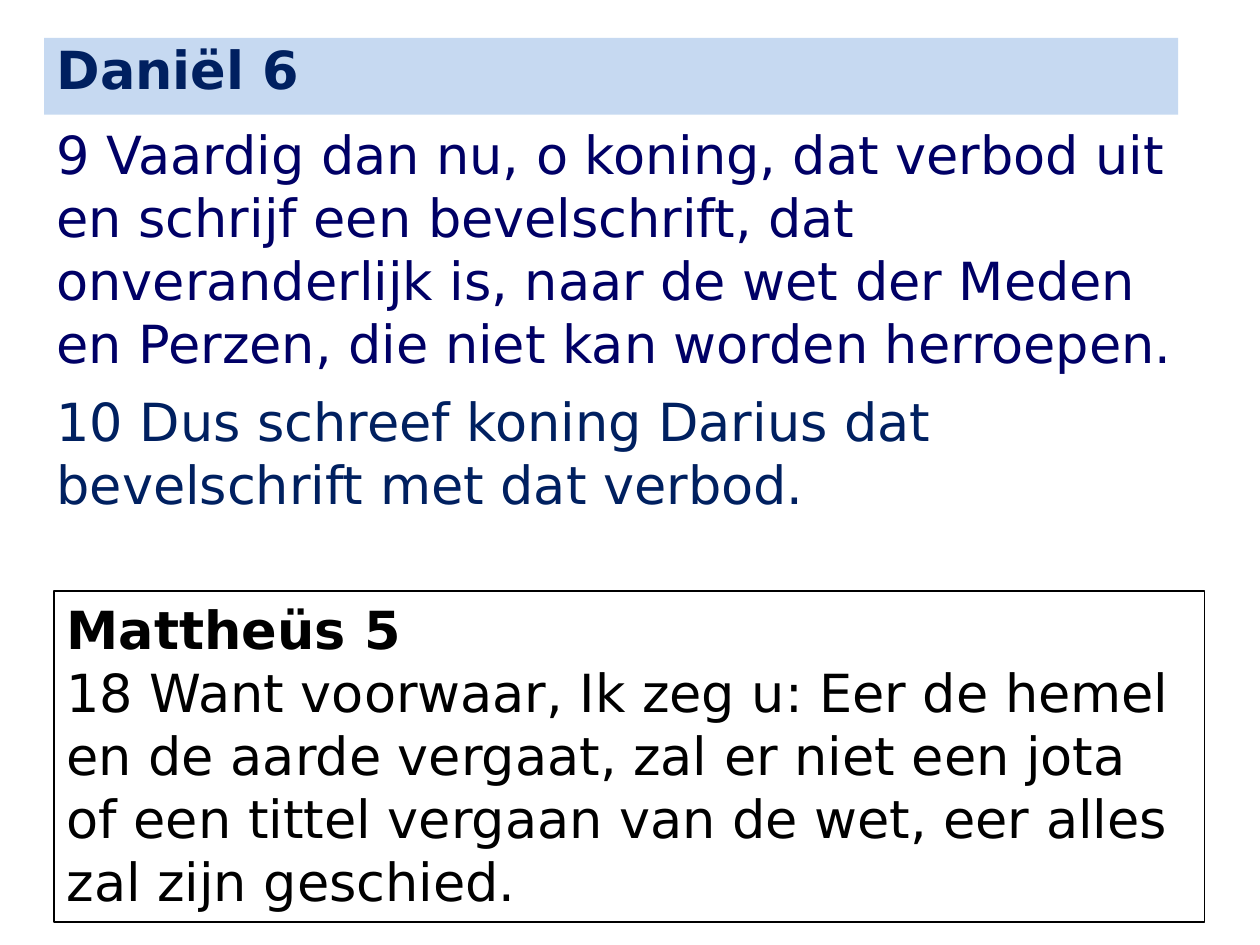
from pptx import Presentation
from pptx.dml.color import RGBColor
from pptx.enum.shapes import MSO_SHAPE
from pptx.enum.text import MSO_ANCHOR, PP_ALIGN
from pptx.util import Inches, Pt

RECTANGLE = MSO_SHAPE.RECTANGLE
TOP = MSO_ANCHOR.TOP
LEFT = PP_ALIGN.LEFT
FONT = "DejaVu Sans"
COLOURS = {
    "band": "C6D9F1",
    "heading": "002060",
    "verse": "000066",
    "black": "000000",
}


def colour(name):
    """Return the named colour."""
    return RGBColor.from_string(COLOURS[name])


def write_text(shape, paragraphs, colour_name, line_spacing=None):
    """Write (text, bold) paragraphs into a shape."""
    frame = shape.text_frame
    frame.word_wrap = True
    frame.vertical_anchor = TOP
    frame.text = "\n".join(text for text, bold in paragraphs)
    for paragraph, (text, bold) in zip(frame.paragraphs, paragraphs):
        paragraph.alignment = LEFT
        if line_spacing:
            paragraph.line_spacing = line_spacing
        font = paragraph.runs[0].font
        font.name = FONT
        font.size = Pt(30)
        font.bold = bold
        font.color.rgb = colour(colour_name)


def add_heading(slide, box, text):
    """Place the chapter name on a filled band."""
    band = slide.shapes.add_shape(RECTANGLE, *box)
    band.shadow.inherit = False
    band.fill.solid()
    band.fill.fore_color.rgb = colour("band")
    band.line.fill.background()
    write_text(band, [(text, True)], "heading", 0.9)


def add_verse(slide, box, text, colour_name):
    """Place one verse in a text box."""
    verse = slide.shapes.add_textbox(*box)
    write_text(verse, [(text, False)], colour_name)


def add_quotation(slide, box, heading, text):
    """Place a headed verse in an outlined frame."""
    frame = slide.shapes.add_shape(RECTANGLE, *box)
    frame.shadow.inherit = False
    frame.fill.background()
    frame.line.color.rgb = colour("black")
    frame.line.width = Pt(1)
    write_text(frame, [(heading, True), (text, False)], "black")


def main():
    """Build the Bible text slide."""
    presentation = Presentation()
    presentation.slide_width = Inches(10)
    presentation.slide_height = Inches(7.5)
    slide = presentation.slides.add_slide(presentation.slide_layouts[6])

    left = Inches(0.35)
    add_verse(
        slide,
        (left, Inches(0.92), Inches(9.3), Inches(2.36)),
        "9 Vaardig dan nu, o koning, dat verbod uit en schrijf een "
        "bevelschrift, dat onveranderlijk is, naar de wet der Meden en "
        "Perzen, die niet kan worden herroepen.",
        "verse",
    )
    add_heading(slide, (left, Inches(0.3), Inches(9), Inches(0.61)), "Daniël 6")
    add_verse(
        slide,
        (left, Inches(3.04), Inches(9.45), Inches(1.11)),
        "10 Dus schreef koning Darius dat bevelschrift met dat verbod.",
        "heading",
    )
    add_quotation(
        slide,
        (Inches(0.43), Inches(4.69), Inches(9.13), Inches(2.63)),
        "Mattheüs 5",
        "18 Want voorwaar, Ik zeg u: Eer de hemel en de aarde vergaat, zal er "
        "niet een jota of een tittel vergaan van de wet, eer alles zal zijn "
        "geschied.",
    )
    presentation.save("out.pptx")


if __name__ == "__main__":
    main()
